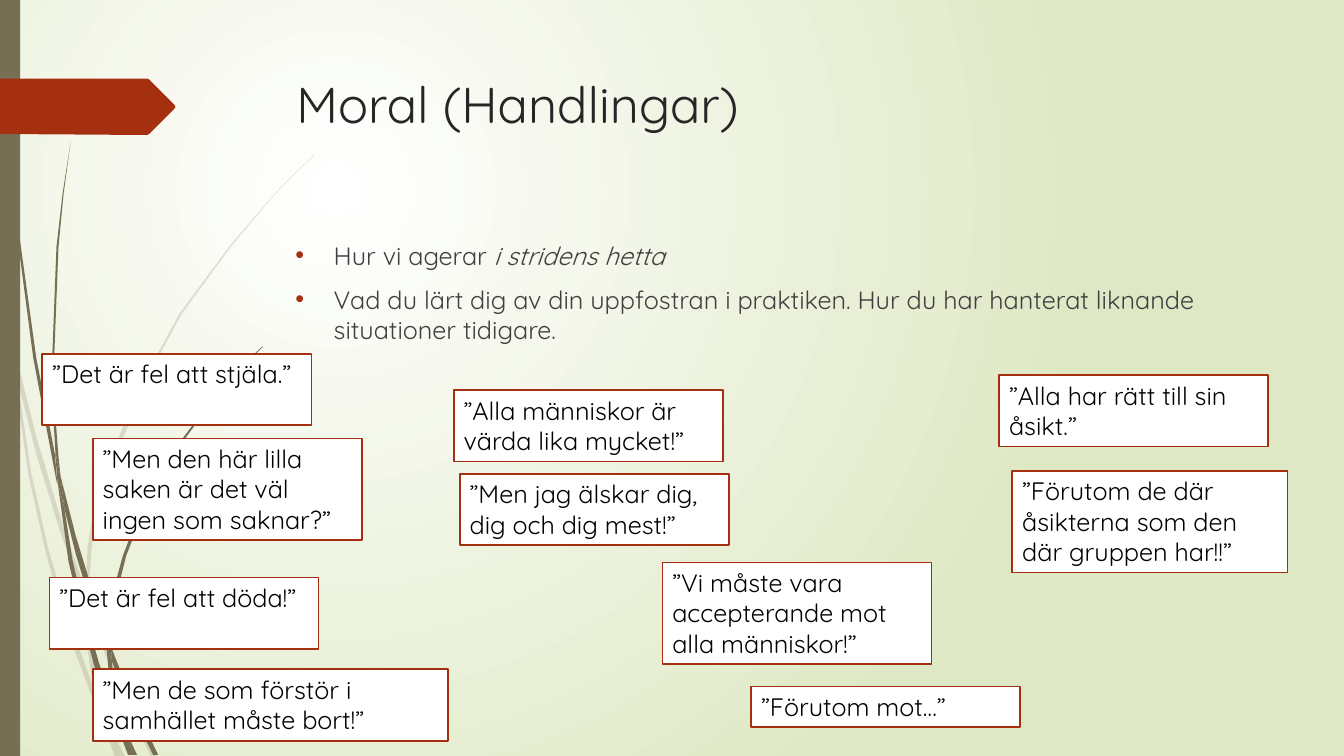
from dataclasses import dataclass

from lxml.etree import SubElement
from pptx import Presentation
from pptx.dml.color import RGBColor
from pptx.enum.shapes import MSO_SHAPE
from pptx.enum.text import MSO_ANCHOR, MSO_AUTO_SIZE, PP_ALIGN
from pptx.oxml.ns import qn
from pptx.shapes.autoshape import Shape
from pptx.slide import Slide
from pptx.text.text import TextFrame, _Paragraph
from pptx.util import Emu, Pt

EMU_PER_PX = 9144

Outline = tuple[tuple[int, int], ...]


@dataclass(frozen=True)
class Theme:
    font: str = "Quicksand"
    title_size: int = 36
    text_size: int = 18
    border_width: float = 1.25
    accent: str = "A53010"
    stalk: str = "766F54"
    title: str = "262626"
    body: str = "404040"
    quote: str = "000000"
    paper: str = "FFFFFF"
    meadow: str = "DFE8C4"


@dataclass(frozen=True)
class Box:
    left: int
    top: int
    width: int
    height: int


@dataclass(frozen=True)
class Quote:
    box: Box
    text: str


@dataclass(frozen=True)
class Grass:
    opacity: int
    blades: tuple[Outline, ...]


@dataclass(frozen=True)
class Phrase:
    text: str
    italic: bool = False


THEME = Theme()
SLIDE = Box(0, 0, 1333, 750)
SIDEBAR = Box(0, 0, 20, 750)
TITLE = Box(284, 68, 975, 140)
BODY = Box(283, 233, 975, 413)
BULLET_INDENT = 38

ARROW: Outline = (
    (0, 78), (146, 78), (148, 79), (173, 104), (174, 106), (173, 108), (148, 133), (146, 134), (0, 133),
)

PALE_GRASS = Grass(20, (
    ((11, 350), (9, 322), (0, 282), (0, 299), (10, 344)),
    ((58, 522), (84, 599), (85, 586), (62, 520), (36, 433), (14, 345), (17, 376), (36, 451)),
    ((92, 607), (88, 596), (88, 610), (123, 694), (150, 751), (155, 751), (127, 692)),
    ((119, 751), (124, 751), (105, 711)),
    ((93, 683), (70, 619), (48, 545), (31, 469), (17, 376), (11, 350), (28, 470), (45, 546), (65, 621),
     (92, 693), (101, 714), (99, 707)),
    ((84, 599), (87, 646), (93, 683), (96, 692), (105, 711), (103, 706), (91, 646), (88, 610), (88, 608)),
    ((88, 584), (91, 542), (98, 501), (110, 462), (127, 423), (160, 349), (180, 312), (229, 245), (268, 198),
     (290, 175), (312, 154), (312, 153), (289, 175), (268, 197), (228, 244), (178, 311), (158, 348),
     (123, 421), (107, 461), (94, 501), (87, 542), (85, 584), (85, 586), (88, 596)),
    ((101, 714), (114, 751), (119, 751)),
    ((96, 692), (93, 683), (99, 707), (101, 714), (119, 751), (105, 711)),
))

DARK_GRASS = Grass(100, (
    ((7, 110), (17, 233), (33, 355), (56, 477), (57, 481), (55, 457), (55, 453), (36, 355), (19, 232),
     (8, 109), (5, 48), (4, 0), (3, 0), (4, 48)),
    ((88, 592), (106, 645), (106, 631), (93, 590), (75, 531), (60, 472), (64, 505), (75, 549)),
    ((113, 649), (110, 641), (111, 656), (132, 708), (152, 749), (157, 749), (136, 706)),
    ((110, 691), (98, 657), (84, 607), (72, 556), (64, 505), (57, 477), (68, 557), (80, 608), (93, 659),
     (111, 708), (117, 722), (116, 717)),
    ((60, 472), (58, 453), (54, 401), (54, 349), (58, 245), (63, 193), (70, 141), (62, 193), (56, 245),
     (52, 349), (52, 399), (55, 449)),
    ((133, 749), (136, 749), (122, 719)),
    ((57, 477), (64, 505), (60, 472), (55, 449), (55, 453)),
    ((111, 633), (115, 592), (125, 552), (140, 513), (158, 476), (180, 440), (205, 406), (231, 374),
     (245, 359), (261, 344), (260, 344), (245, 358), (231, 373), (204, 405), (178, 439), (156, 474),
     (137, 512), (122, 551), (111, 591), (106, 631), (110, 641)),
    ((117, 722), (127, 749), (131, 749)),
    ((106, 645), (110, 691), (116, 706), (122, 719), (121, 716), (114, 686), (111, 656), (109, 651)),
    ((106, 645), (109, 651), (111, 656), (110, 641), (106, 631)),
    ((116, 706), (110, 691), (116, 717), (117, 722), (130, 749), (133, 749), (122, 719)),
))

BULLETS: tuple[tuple[Phrase, ...], ...] = (
    (Phrase("Hur vi agerar "), Phrase("i stridens hetta", italic=True)),
    (Phrase("Vad du lärt dig av din uppfostran i praktiken. Hur du har hanterat liknande situationer tidigare."),),
)

QUOTES = (
    Quote(Box(42, 351, 267, 71), "”Det är fel att stjäla.”"),
    Quote(Box(49, 573, 267, 71), "”Det är fel att döda!”"),
    Quote(Box(450, 387, 267, 71), "”Alla människor är värda lika mycket!”"),
    Quote(Box(657, 558, 267, 101), "”Vi måste vara accepterande mot alla människor!”"),
    Quote(Box(991, 372, 267, 71), "”Alla har rätt till sin åsikt.”"),
    Quote(Box(1004, 467, 273, 101), "”Förutom de där åsikterna som den där gruppen har!!”"),
    Quote(Box(456, 470, 267, 71), "”Men jag älskar dig, dig och dig mest!”"),
    Quote(Box(92, 435, 267, 101), "”Men den här lilla saken är det väl ingen som saknar?”"),
    Quote(Box(92, 664, 352, 71), "”Men de som förstör i samhället måste bort!”"),
    Quote(Box(745, 681, 267, 40), "”Förutom mot…”"),
)


def px(length: int) -> Emu:
    return Emu(length * EMU_PER_PX)


def color(value: str) -> RGBColor:
    return RGBColor.from_string(value)


def place(shape: Shape, box: Box) -> None:
    shape.left, shape.top = px(box.left), px(box.top)
    shape.width, shape.height = px(box.width), px(box.height)


def paint(shape: Shape, fill: str, opacity: int = 100) -> None:
    shape.shadow.inherit = False
    shape.fill.solid()
    shape.fill.fore_color.rgb = color(fill)
    shape.line.fill.background()
    if opacity < 100:
        shade = shape.element.spPr.find(f"{qn('a:solidFill')}/{qn('a:srgbClr')}")
        SubElement(shade, qn("a:alpha"), val=str(opacity * 1000))


def draw_background(slide: Slide) -> None:
    fill = slide.background.fill
    fill.gradient()
    for stop, value in zip(fill.gradient_stops, (THEME.paper, THEME.meadow)):
        stop.color.rgb = color(value)
    gradient = slide.element.find(f".//{qn('a:gradFill')}")
    gradient.remove(gradient.find(qn("a:lin")))
    circle = SubElement(gradient, qn("a:path"), path="circle")
    SubElement(circle, qn("a:fillToRect"), l="50000", t="50000", r="100000", b="100000")


def draw_outline(shapes, outline: Outline, fill: str, opacity: int = 100) -> None:
    builder = shapes.build_freeform(*outline[0], scale=EMU_PER_PX)
    builder.add_line_segments(outline[1:], close=True)
    paint(builder.convert_to_shape(), fill, opacity)


def draw_grass(slide: Slide, grass: Grass) -> None:
    group = slide.shapes.add_group_shape()
    for blade in grass.blades:
        draw_outline(group.shapes, blade, THEME.stalk, grass.opacity)


def draw_box(slide: Slide, box: Box, fill: str) -> Shape:
    shape = slide.shapes.add_shape(MSO_SHAPE.RECTANGLE, 0, 0, 0, 0)
    place(shape, box)
    paint(shape, fill)
    return shape


def format_frame(frame: TextFrame) -> None:
    frame.word_wrap = True
    frame.auto_size = MSO_AUTO_SIZE.NONE
    frame.vertical_anchor = MSO_ANCHOR.TOP


def format_paragraph(paragraph: _Paragraph, size: int, value: str) -> None:
    paragraph.alignment = PP_ALIGN.LEFT
    paragraph.font.name = THEME.font
    paragraph.font.size = Pt(size)
    paragraph.font.color.rgb = color(value)


def add_bullet(paragraph: _Paragraph) -> None:
    paragraph.space_before = Pt(10)
    properties = paragraph._p.get_or_add_pPr()
    properties.set("marL", str(px(BULLET_INDENT)))
    properties.set("indent", str(-px(BULLET_INDENT)))
    bullet_color = SubElement(properties, qn("a:buClr"))
    SubElement(bullet_color, qn("a:srgbClr"), val=THEME.accent)
    SubElement(properties, qn("a:buFont"), typeface="Arial")
    SubElement(properties, qn("a:buChar"), char="•")


def fill_placeholders(slide: Slide) -> None:
    title, body = slide.shapes.title, slide.placeholders[1]
    for placeholder, box in ((title, TITLE), (body, BODY)):
        place(placeholder, box)
        format_frame(placeholder.text_frame)
        slide.shapes.element.append(placeholder.element)
    title.text_frame.text = "Moral (Handlingar)"
    format_paragraph(title.text_frame.paragraphs[0], THEME.title_size, THEME.title)
    frame = body.text_frame
    for index, phrases in enumerate(BULLETS):
        paragraph = frame.add_paragraph() if index else frame.paragraphs[0]
        add_bullet(paragraph)
        format_paragraph(paragraph, THEME.text_size, THEME.body)
        for phrase in phrases:
            run = paragraph.add_run()
            run.text = phrase.text
            if phrase.italic:
                run.font.italic = True


def draw_quote(slide: Slide, quote: Quote) -> None:
    shape = draw_box(slide, quote.box, THEME.paper)
    shape.line.color.rgb = color(THEME.accent)
    shape.line.width = Pt(THEME.border_width)
    format_frame(shape.text_frame)
    shape.text_frame.text = quote.text
    format_paragraph(shape.text_frame.paragraphs[0], THEME.text_size, THEME.quote)


def main() -> None:
    presentation = Presentation()
    presentation.slide_width, presentation.slide_height = px(SLIDE.width), px(SLIDE.height)
    slide = presentation.slides.add_slide(presentation.slide_layouts[1])
    draw_background(slide)
    for grass in (PALE_GRASS, DARK_GRASS):
        draw_grass(slide, grass)
    draw_box(slide, SIDEBAR, THEME.stalk)
    draw_outline(slide.shapes, ARROW, THEME.accent)
    fill_placeholders(slide)
    for quote in QUOTES:
        draw_quote(slide, quote)
    presentation.save("out.pptx")


if __name__ == "__main__":
    main()
